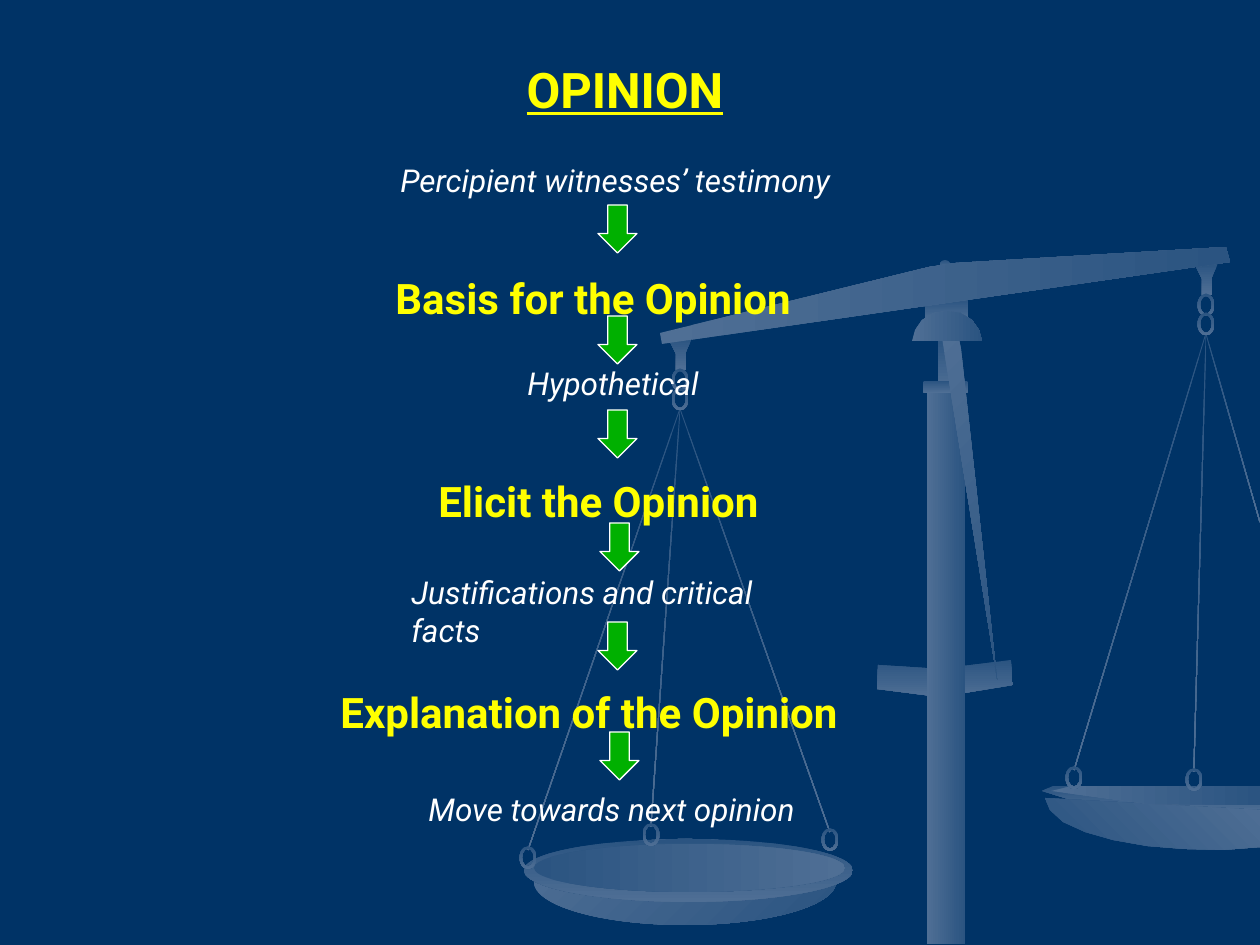
import math
import pptx
import pptx.util
import pptx.dml.color
import pptx.enum.shapes
import pptx.enum.text

PX = 914400 / 126
THEME = {
    "font": "Roboto", "background": "003366", "arrow": "00B000", "arrow_line": "FFFFFF",
    "dark": "2B5481", "light": "4F6F95",
    "title": {"size": 28, "bold": True, "underline": True, "color": "FFFF00"},
    "step": {"size": 24, "bold": True, "color": "FFFF00"},
    "link": {"size": 18, "italic": True, "color": "FFFFFF"},
}
# Gradient looks: first colour, last colour, clockwise angle
LOOKS = {
    "down": ("dark", "light", 90), "rise": ("dark", "light", 315),
    "inner": ("dark", "light", 0), "across": ("light", "dark", 0),
    "slant": ("light", "dark", 45),
}

TITLE = ("OPINION", (63, 53, 1124, 72))
TEXT_HEIGHT = {"link": 50, "step": 89}
TEXTS = [  # style, text, left, top, width
    ("link", "Percipient witnesses’ testimony", 388, 155, 462),
    ("step", "Basis for the Opinion", 383, 241, 473),
    ("link", "Hypothetical", 515, 358, 207),
    ("step", "Elicit the Opinion", 426, 444, 388),
    ("link", "Justifications and critical facts", 399, 567, 441),
    ("step", "Explanation of the Opinion", 328, 655, 596),
    ("link", "Move towards next opinion", 416, 784, 404),
]
ARROW_SIZE = (39, 48)
ARROWS = [(598, 205), (598, 316), (598, 410), (600, 523), (598, 622), (600, 732)]

# Scales of justice: each pan hangs from the top of its hook
HOOK = [(-12, 0), (11, -2), (5, 12), (5, 30), (-5, 30), (-5, 14)]
RING = (17, 23)
HANGERS = [  # hook top, ends of the strings
    ((681, 340), [(528, 850), (651, 827), (830, 832)]),
    ((1207, 265), [(1074, 770), (1194, 772), (1260, 522)]),
]
RING_DROPS = (40, 59)
STRING_DROP = 69
EDGE = 1260
CROSSBAR = [(878, 665), (940, 669), (1011, 660), (1013, 685), (940, 697), (877, 689)]
RIM = [(1042, 791), (1053, 786), (EDGE, 787), (EDGE, 813), (1178, 811), (1087, 805)]
INSIDE = [(1051, 791), (1072, 786), (EDGE, 786), (EDGE, 805), (1149, 804)]
BEAM = [(1226, 247), (1230, 262), (662, 344), (660, 333), (929, 267), (956, 263)]
STRUT = [(997, 679), (942, 338), (958, 334), (961, 349)]
BOWL_ARC = (1210, 798, 165, 52, 180, 72)
DOME_ARC = (947, 341, 35, 30, 180, 360)
LEFT_PAN = [("slant", (534, 839, 302, 86)), ("down", (524, 839, 329, 63)),
            ("inner", (534, 844, 311, 48))]
PIVOT = [("rect", "down", (925, 299, 43, 23)), ("ellipse", "down", (940, 260, 10, 10))]
POST = [("rect", "across", (927, 388, 38, 556)), ("rect", "down", (938, 338, 16, 53)),
        ("round", "down", (923, 381, 45, 12))]

MSO = pptx.enum.shapes.MSO_SHAPE
PRESETS = {"rect": MSO.RECTANGLE, "ellipse": MSO.OVAL,
           "round": MSO.ROUNDED_RECTANGLE, "ring": MSO.DONUT}


def emu(*lengths):
    return [pptx.util.Emu(round(n * PX)) for n in lengths]


def rgb(value):
    return pptx.dml.color.RGBColor.from_string(value)


def arc(cx, cy, rx, ry, start, end, steps=8):
    """Points on an ellipse, with angles in degrees clockwise from the right."""
    angles = [math.radians(start + (end - start) * i / steps) for i in range(steps + 1)]
    return [(round(cx + rx * math.cos(a)), round(cy + ry * math.sin(a))) for a in angles]


def paint(sp, look):
    first, last, angle = LOOKS[look]
    sp.fill.gradient()
    sp.fill.gradient_angle = (360 - angle) % 360
    for stop, position, name in zip(sp.fill.gradient_stops, (0, 1), (first, last)):
        stop.position = position
        stop.color.rgb = rgb(THEME[name])
    sp.line.fill.background()
    sp.shadow.inherit = False


def add_preset(shapes, kind, look, box):
    sp = shapes.add_shape(PRESETS[kind], *emu(*box))
    paint(sp, look)
    return sp


def add_outline(shapes, look, points):
    builder = shapes.build_freeform(*points[0], scale=PX)
    builder.add_line_segments(points[1:], close=True)
    paint(builder.convert_to_shape(), look)


def add_ring(shapes, cx, cy):
    w, h = RING
    sp = add_preset(shapes, "ring", "down", (cx - w / 2, cy - h / 2, w, h))
    sp.adjustments[0] = 0.16


def add_string(shapes, start, end):
    """Add a thin bar turned to run from start to end."""
    dx, dy = end[0] - start[0], end[1] - start[1]
    length = math.hypot(dx, dy)
    x, y = start[0] + dx / 2, start[1] + dy / 2
    sp = add_preset(shapes, "rect", "down", (x - 0.5, y - length / 2, 1, length))
    sp.rotation = round(-math.degrees(math.atan2(dx, dy)), 1)


def add_scales(shapes):
    for part in PIVOT:
        add_preset(shapes, *part)
    for (x, y), ends in HANGERS:
        for end in ends:
            add_string(shapes, (x - 1, y + STRING_DROP), end)
    add_outline(shapes, "down", CROSSBAR)
    add_outline(shapes, "down", RIM)
    add_outline(shapes, "rise", arc(*BOWL_ARC) + [(EDGE, 810)])
    add_outline(shapes, "across", INSIDE)
    for (x, y), _ in HANGERS:
        add_outline(shapes, "down", [(x + u, y + v) for u, v in HOOK])
        for drop in RING_DROPS:
            add_ring(shapes, x - 1, y + drop)
    add_outline(shapes, "across", BEAM)
    for look, box in LEFT_PAN:
        add_preset(shapes, "ellipse", look, box)
    for _, ends in HANGERS:
        for x, y in ends:
            if x < EDGE:
                add_ring(shapes, x, y + RING[1] / 3)
    for part in POST:
        add_preset(shapes, *part)
    add_outline(shapes, "slant", STRUT)
    add_outline(shapes, "across", arc(*DOME_ARC))


def write(sp, text, style):
    tf = sp.text_frame
    tf.word_wrap = True
    tf.auto_size = pptx.enum.text.MSO_AUTO_SIZE.SHAPE_TO_FIT_TEXT
    p = tf.paragraphs[0]
    r = p.add_run()
    r.text = text
    r.font.name = THEME["font"]
    for name, value in THEME[style].items():
        if name == "color":
            r.font.color.rgb = rgb(value)
        else:
            setattr(r.font, name, pptx.util.Pt(value) if name == "size" else value)
    return p


def main():
    prs = pptx.Presentation()
    prs.slide_width, prs.slide_height = emu(1260, 945)
    s = prs.slides.add_slide(prs.slide_layouts[5])
    s.background.fill.solid()
    s.background.fill.fore_color.rgb = rgb(THEME["background"])
    add_scales(s.shapes.add_group_shape().shapes)

    text, box = TITLE
    title = s.shapes.title
    title.left, title.top, title.width, title.height = emu(*box)
    write(title, text, "title").alignment = pptx.enum.text.PP_ALIGN.CENTER

    for style, text, x, y, width in TEXTS:
        box = s.shapes.add_textbox(*emu(x, y, width, TEXT_HEIGHT[style]))
        p = write(box, text, style)
        if style == "step":
            p.line_spacing = 1.5

    for spot in ARROWS:
        sp = s.shapes.add_shape(MSO.DOWN_ARROW, *emu(*spot, *ARROW_SIZE))
        sp.fill.solid()
        sp.fill.fore_color.rgb = rgb(THEME["arrow"])
        sp.line.color.rgb = rgb(THEME["arrow_line"])
        sp.line.width = pptx.util.Pt(0.75)
        sp.shadow.inherit = False

    prs.save("out.pptx")


if __name__ == "__main__":
    main()
